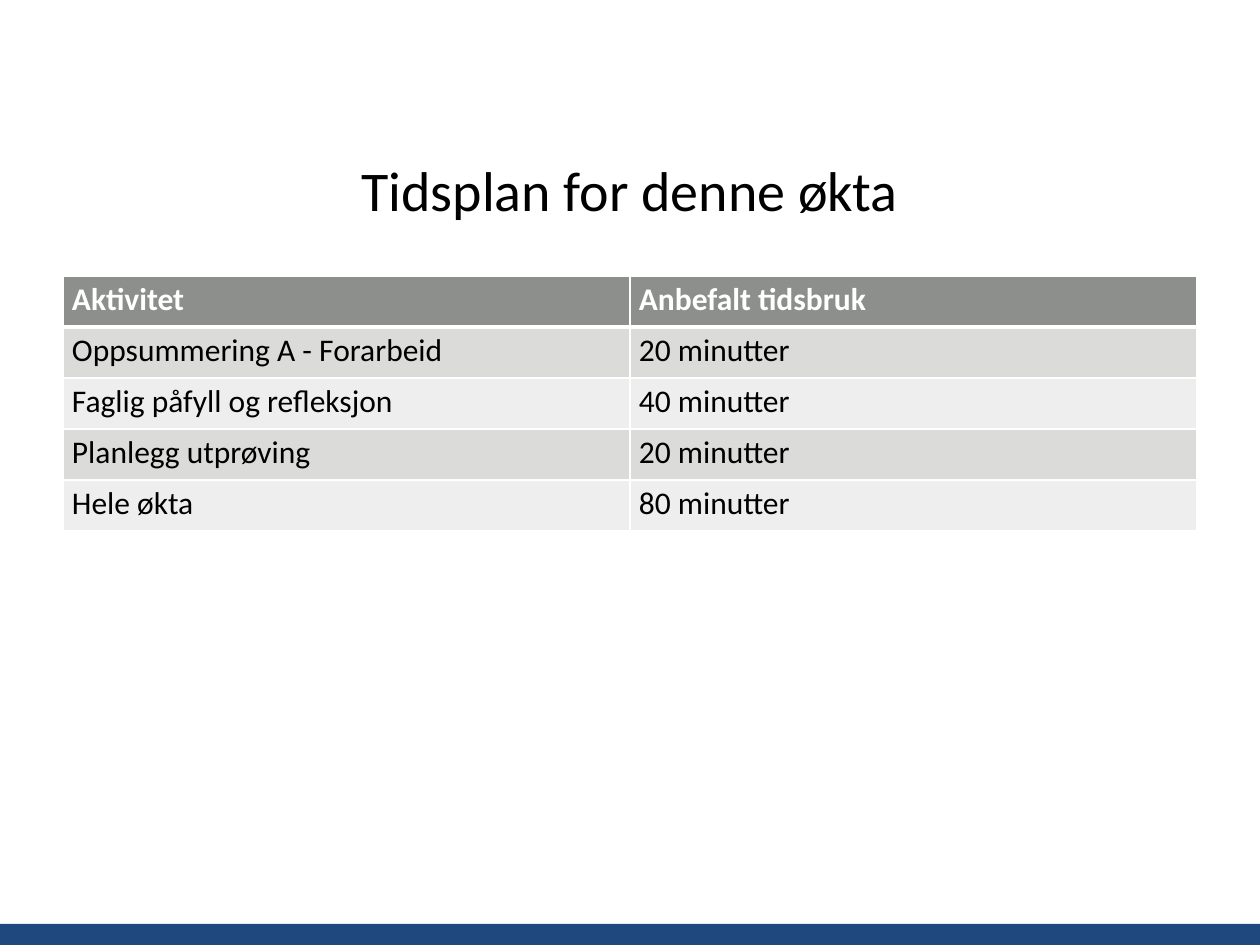
from pptx import Presentation
from pptx.dml.color import RGBColor
from pptx.enum.shapes import MSO_SHAPE as Shape
from pptx.enum.text import MSO_ANCHOR as Anchor, PP_ALIGN as Align
from pptx.oxml.ns import qn
from pptx.util import Emu, Pt
from lxml.etree import SubElement

SCALE = 914400 // 126

ROWS = [
    ("Aktivitet", "Anbefalt tidsbruk"),
    ("Oppsummering A - Forarbeid", "20 minutter"),
    ("Faglig påfyll og refleksjon", "40 minutter"),
    ("Planlegg utprøving", "20 minutter"),
    ("Hele økta", "80 minutter"),
]


def px(n):
    return Emu(n * SCALE)


def color(code):
    return RGBColor.from_string(code)


class Deck:
    """Style and current slide."""
    font = "Calibri"
    ink, white, blue = "000000", "FFFFFF", "1F487E"
    head, bands = "8D8F8C", ("DBDBDA", "EEEEEE")

    def __init__(self, wide, high):
        self.prs = Presentation()
        self.prs.slide_width, self.prs.slide_height = px(wide), px(high)
        self.slide = self.prs.slides.add_slide(self.prs.slide_layouts[6])
        fill = self.slide.background.fill
        fill.solid()
        fill.fore_color.rgb = color(self.white)

    def run(self, para, text, size, ink, bold=False):
        run = para.add_run()
        run.text = text
        font = run.font
        font.name, font.size, font.bold = self.font, Pt(size), bold
        font.color.rgb = color(ink)

    def bar(self, *box):
        bar = self.slide.shapes.add_shape(Shape.RECTANGLE, *map(px, box))
        bar.shadow.inherit = False
        bar.fill.solid()
        bar.fill.fore_color.rgb = color(self.blue)
        bar.line.fill.background()

    def title(self, text, *box):
        frame = self.slide.shapes.add_textbox(*map(px, box)).text_frame
        frame.word_wrap = True
        frame.vertical_anchor = Anchor.MIDDLE
        para = frame.paragraphs[0]
        para.alignment = Align.CENTER
        self.run(para, text, 32, self.ink)

    def edge(self, cell, side, width):
        props = cell._tc.get_or_add_tcPr()
        line = SubElement(props, qn("a:ln" + side), w=str(Pt(width)))
        fill = SubElement(line, qn("a:solidFill"))
        SubElement(fill, qn("a:srgbClr"), val=self.white)

    def cell(self, cell, text, row):
        cell.margin_left = cell.margin_right = px(9)
        cell.margin_top = cell.margin_bottom = px(5)
        top, bottom = (3 if row == 1 else 1), (3 if row == 0 else 1)
        for side, width in zip("LRTB", (1, 1, top, bottom)):
            self.edge(cell, side, width)
        first = row == 0
        cell.fill.solid()
        back = self.head if first else self.bands[(row - 1) % 2]
        cell.fill.fore_color.rgb = color(back)
        ink = self.white if first else self.ink
        self.run(cell.text_frame.paragraphs[0], text, 18, ink, first)

    def table(self, rows, *box):
        shape = self.slide.shapes.add_table(
            len(rows), len(rows[0]), *map(px, box))
        for r, texts in enumerate(rows):
            for c, text in enumerate(texts):
                self.cell(shape.table.cell(r, c), text, r)


def main():
    deck = Deck(1260, 945)
    deck.bar(0, 924, 1260, 21)
    deck.title("Tidsplan for denne økta", 63, 126, 1134, 127)
    deck.table(ROWS, 63, 276, 1134, 51 * len(ROWS))
    deck.prs.save("out.pptx")


if __name__ == "__main__":
    main()
